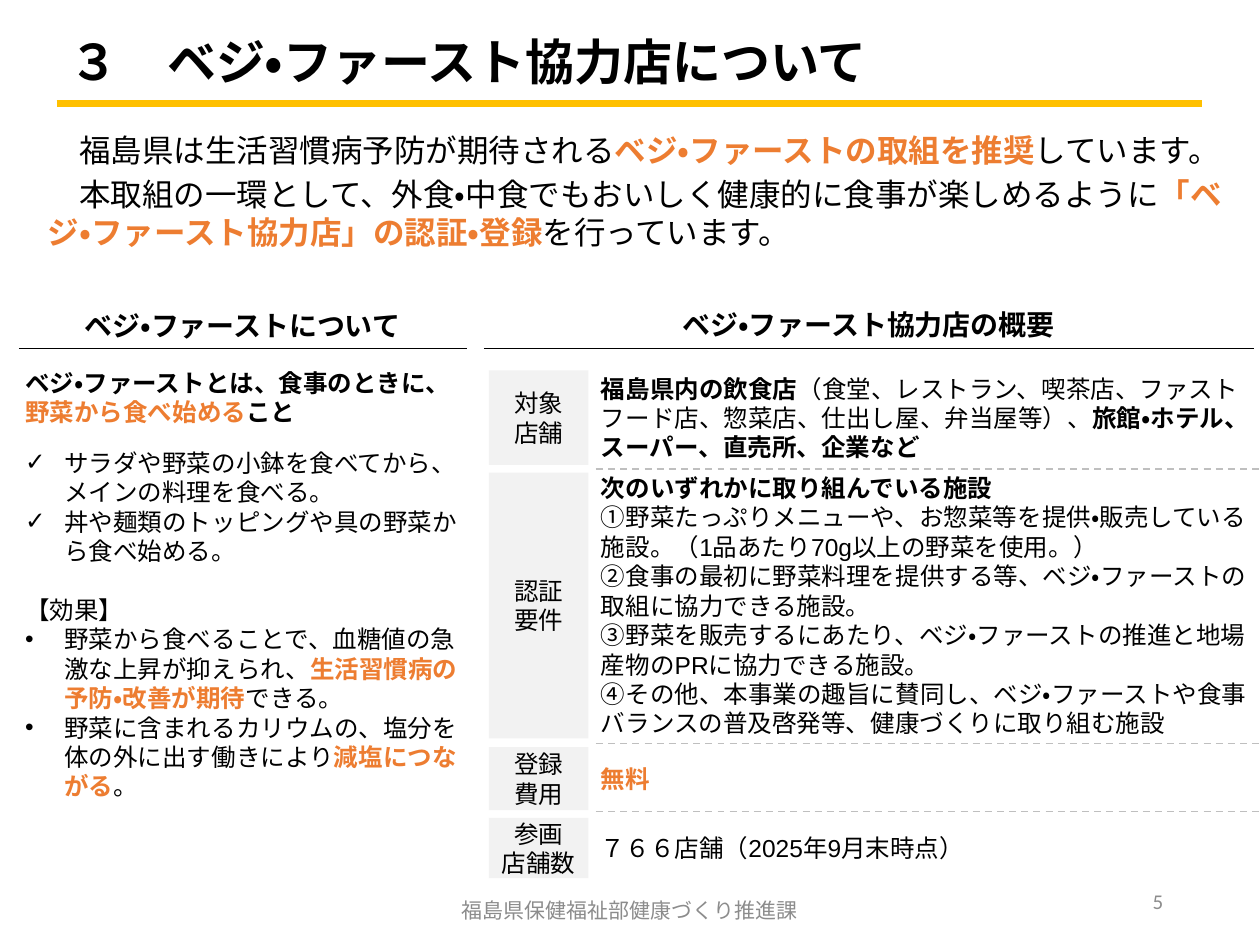
from lxml import etree
from pptx import Presentation
from pptx.dml.color import RGBColor
from pptx.enum import dml, lang, shapes, text
from pptx.oxml import ns
from pptx.util import Inches, Pt

BLACK = RGBColor(0, 0, 0)
ORANGE = RGBColor(0xED, 0x7D, 0x31)
GOLD = RGBColor(0xFF, 0xC0, 0x00)
GRAY = RGBColor(0x8C, 0x8C, 0x8C)
PALE = RGBColor(0xF2, 0xF2, 0xF2)
RULE = RGBColor(0xBF, 0xBF, 0xBF)
LEFT, MID, RIGHT = text.PP_ALIGN.LEFT, text.PP_ALIGN.CENTER, text.PP_ALIGN.RIGHT
TOP, HALF = text.MSO_ANCHOR.TOP, text.MSO_ANCHOR.MIDDLE

deck = Presentation()
deck.slide_width, deck.slide_height = Inches(10), Inches(7.5)
slide = deck.slides.add_slide(deck.slide_layouts[1])
items = slide.shapes


def write(shape, paras, size=14, font="Arial", color=BLACK, bold=False,
          align=LEFT, anchor=TOP, pad=(0.1, 0.05), before=0, bullets=None):
    """Fill a shape; a run is plain text, or (text, colour) for bold."""
    frame = shape.text_frame
    frame.word_wrap = True
    frame.auto_size = text.MSO_AUTO_SIZE.NONE
    frame.vertical_anchor = anchor
    frame.margin_left = frame.margin_right = Inches(pad[0])
    frame.margin_top = frame.margin_bottom = Inches(pad[1])
    for i, runs in enumerate(paras):
        para = frame.paragraphs[0] if i == 0 else frame.add_paragraph()
        para.alignment = align
        para.space_before = Pt(before if i else 0)
        if bullets:
            mark, props = bullets[i], para._p.get_or_add_pPr()
            hang = Inches(0.31) if mark else 0
            props.set("marL", str(hang))
            props.set("indent", str(-hang))
            kind = "a:buChar" if mark else "a:buNone"
            bullet = etree.SubElement(props, ns.qn(kind))
            if mark:
                bullet.set("char", mark)
        for part in [runs] if isinstance(runs, str) else runs:
            plain = isinstance(part, str)
            run = para.add_run()
            run.text = part if plain else part[0]
            run.font.name, run.font.size = font, Pt(size)
            run.font.bold = bold or not plain
            run.font.color.rgb = color if plain else part[1]
            run.font.language_id = lang.MSO_LANGUAGE_ID.JAPANESE


def rule(x, y, end, color, width, dash=False):
    line = items.add_connector(shapes.MSO_CONNECTOR.STRAIGHT, Inches(x),
                               Inches(y), Inches(end), Inches(y))
    line.line.color.rgb, line.line.width = color, Pt(width)
    if dash:
        line.line.dash_style = dml.MSO_LINE.DASH
    etree.SubElement(line._element.spPr, ns.qn("a:effectLst"))


# Title and its rule
title = items.title
title.left, title.top = Inches(0.45), Inches(0.04)
title.width, title.height = Inches(7.3), Inches(0.94)
write(title, ["３　ベジ・ファースト協力店について"], size=28, bold=True, anchor=HALF)
title.text_frame.paragraphs[0].line_spacing = 0.9
rule(0.45, 0.82, 9.54, GOLD, 4)

# Introduction
intro = items.add_textbox(Inches(0.38), Inches(1.04), Inches(9.4), Inches(1.17))
write(intro, [
    ["　福島県は生活習慣病予防が期待される",
     ("ベジ・ファーストの取組を推奨", ORANGE), "しています。"],
    ["　本取組の一環として、外食・中食でもおいしく健康的に食事が楽しめるように",
     ("「ベジ・ファースト協力店」の認証・登録", ORANGE), "を行っています。"],
], size=18, pad=(0, 0), before=3.6)

# Column headings
for name, x, y, wide, start, end in [
    ("ベジ・ファーストについて", 0.52, 2.4, 2.81, 0.15, 3.71),
    ("ベジ・ファースト協力店の概要", 4.62, 2.39, 4.55, 3.84, 9.95),
]:
    head = items.add_textbox(Inches(x), Inches(y), Inches(wide), Inches(0.35))
    write(head, [name], size=16, bold=True, align=MID, pad=(0, 0.05))
    rule(start, 2.76, end, BLACK, 0.25)

# Left column: what it is and its effects
body = slide.placeholders[1]
body.left, body.top = Inches(0.2), Inches(2.87)
body.width, body.height = Inches(3.56), Inches(3.82)
write(body, [
    [("ベジ・ファーストとは、食事のときに、", BLACK),
     ("野菜から食べ始める", ORANGE), ("こと", BLACK)],
    "サラダや野菜の小鉢を食べてから、メインの料理を食べる。",
    "丼や麺類のトッピングや具の野菜から食べ始める。",
    "【効果】",
    ["野菜から食べることで、血糖値の急激な上昇が抑えられ、",
     ("生活習慣病の予防・改善が期待", ORANGE), "できる。"],
    ["野菜に含まれるカリウムの、塩分を体の外に出す働きにより",
     ("減塩につながる", ORANGE), "。"],
], pad=(0, 0.05), bullets=["", "✓", "✓", "", "•", "•"])
body.text_frame.paragraphs[0].space_after = Pt(12)
body.text_frame.paragraphs[3].space_before = Pt(16.8)

# Right column: label, top, height, details
rows = [
    (["対象", "店舗"], 2.94, 0.75, [
        [("福島県内の飲食店", BLACK),
         "（食堂、レストラン、喫茶店、ファストフード店、惣菜店、仕出し屋、弁当屋等）、",
         ("旅館・ホテル、スーパー、直売所、企業など", BLACK)]]),
    (["認証", "要件"], 3.75, 2.11, [
        [("次のいずれかに取り組んでいる施設", BLACK)],
        "①野菜たっぷりメニューや、お惣菜等を提供・販売している施設。（1品あたり70g以上の野菜を使用。）",
        "②食事の最初に野菜料理を提供する等、ベジ・ファーストの取組に協力できる施設。",
        "③野菜を販売するにあたり、ベジ・ファーストの推進と地場産物のPRに協力できる施設。",
        "④その他、本事業の趣旨に賛同し、ベジ・ファーストや食事バランスの普及啓発等、健康づくりに取り組む施設"]),
    (["登録", "費用"], 5.93, 0.5, [[("無料", ORANGE)]]),
    (["参画", "店舗数"], 6.49, 0.48, ["７６６店舗（2025年9月末時点）"]),
]
for label, y, high, details in rows:
    tag = items.add_shape(shapes.MSO_SHAPE.RECTANGLE, Inches(3.88), Inches(y),
                          Inches(0.79), Inches(high))
    tag.shadow.inherit = False
    tag.fill.solid()
    tag.fill.fore_color.rgb = PALE
    tag.line.fill.background()
    write(tag, label, align=MID, anchor=HALF, pad=(0.04, 0.04))
    cell = items.add_textbox(Inches(4.73), Inches(y), Inches(5.23), Inches(high))
    write(cell, details, anchor=HALF, pad=(0.04, 0.04))
for y in (3.72, 5.9, 6.44):
    rule(4.73, y, 10.03, RULE, 1, dash=True)

# Footer and page number
for note, x, y, wide, align in [
    ("福島県保健福祉部健康づくり推進課", 3.31, 7.02, 3.38, MID),
    ("5", 7.08, 6.95, 2.25, RIGHT),
]:
    foot = items.add_textbox(Inches(x), Inches(y), Inches(wide), Inches(0.4))
    write(foot, [note], size=12, font="Calibri", color=GRAY, align=align, anchor=HALF)

deck.save("out.pptx")
